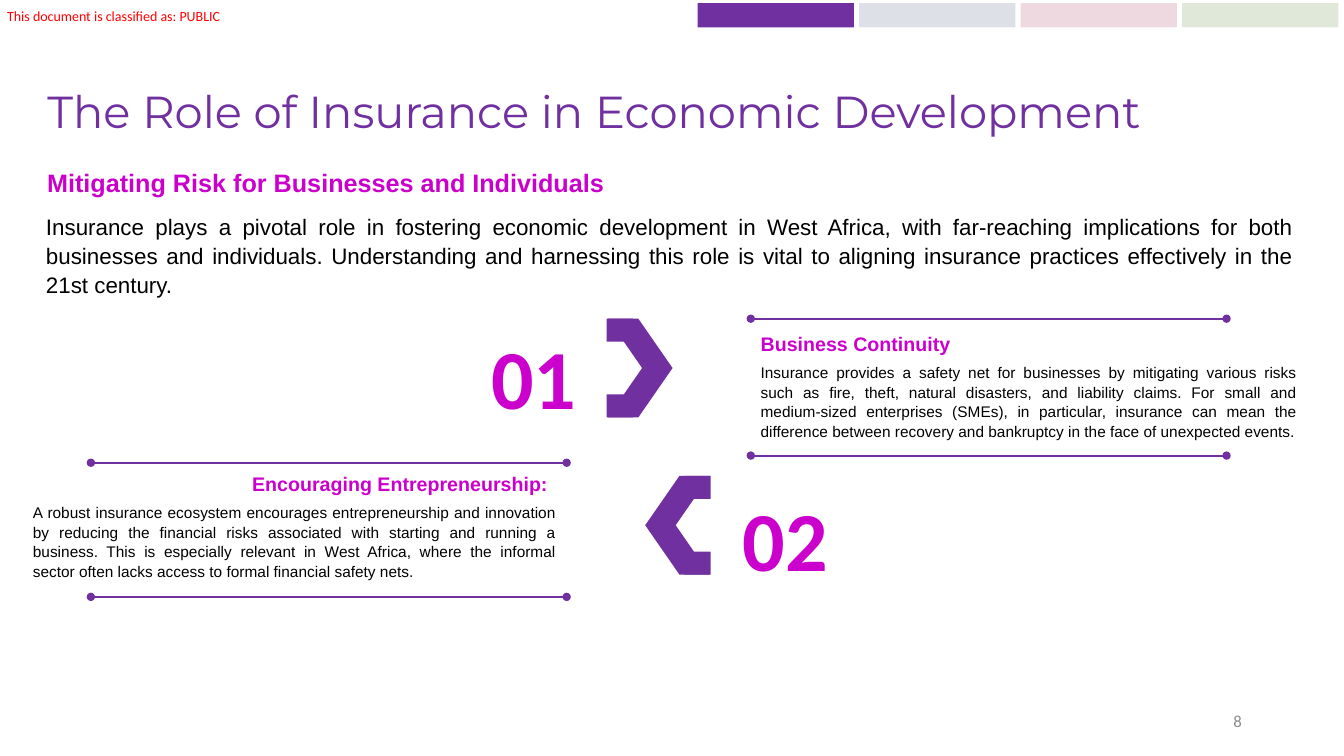
from lxml.etree import SubElement
from pptx import Presentation
from pptx.dml.color import RGBColor
from pptx.enum.shapes import MSO_CONNECTOR, MSO_SHAPE
from pptx.enum.text import MSO_ANCHOR, PP_ALIGN as Align
from pptx.oxml.ns import qn
from pptx.util import Cm, Pt

COLORS = {
    "purple": "7030A0", "magenta": "CC00CC", "black": "000000", "red": "FF0000",
    "gray": "8C8C8C", "navy": "203864", "crimson": "990033", "green": "336600",
}

TITLE = "The Role of Insurance in Economic Development"
SUBTITLE = "Mitigating Risk for Businesses and Individuals"
INTRO = (
    "Insurance plays a pivotal role in fostering economic development in West Africa, "
    "with far-reaching implications for both businesses and individuals. Understanding "
    "and harnessing this role is vital to aligning insurance practices effectively in "
    "the 21st century."
)
CLASSIFICATION = "This document is classified as: PUBLIC"
PAGE_NUMBER = "8"

# Boxes are left, top, width, height in centimetres.
POINTS = [
    {
        "number": "01", "number_at": (12.01, 8.08),
        "arrow_at": (15.32, 8.03), "bars_left": 15.29, "rotation": 0,
        "heading": "Business Continuity", "heading_align": Align.LEFT,
        "heading_box": (18.92, 8.23, 13.92, 0.86),
        "body": "Insurance provides a safety net for businesses by mitigating various "
                "risks such as fire, theft, natural disasters, and liability claims. For "
                "small and medium-sized enterprises (SMEs), in particular, insurance can "
                "mean the difference between recovery and bankruptcy in the face of "
                "unexpected events.",
        "body_box": (18.92, 8.99, 14.02, 2.74),
        "rules_left": 18.92, "rule_tops": (8.03, 11.48),
    },
    {
        "number": "02", "number_at": (18.34, 12.17),
        "arrow_at": (16.26, 11.99), "bars_left": 17.25, "rotation": 180,
        "heading": "Encouraging Entrepreneurship: ", "heading_align": Align.RIGHT,
        "heading_box": (2.67, 11.76, 11.53, 0.86),
        "body": "A robust insurance ecosystem encourages entrepreneurship and innovation "
                "by reducing the financial risks associated with starting and running a "
                "business. This is especially relevant in West Africa, where the informal "
                "sector often lacks access to formal financial safety nets.",
        "body_box": (0.58, 12.52, 13.69, 2.24),
        "rules_left": 2.29, "rule_tops": (11.66, 15.04),
    },
]
TABS = [("purple", None), ("navy", 15), ("crimson", 15), ("green", 15)]

TAB_LEFT, TAB_TOP, TAB_WIDTH, TAB_HEIGHT, TAB_STEP = 17.58, 0.08, 3.94, 0.61, 4.07
ARROW_WIDTH, ARROW_HEIGHT = 1.63, 2.49
BAR_WIDTH, BAR_HEIGHT = 0.66, 0.58
NUMBER_SIZE = (2.9, 2.82)
RULE_LENGTH = 11.99


def color(name):
    return RGBColor.from_string(COLORS[name])


def write(frame, text, size, color_name, font="Arial", bold=False, align=Align.LEFT,
          line_spacing=None, space_after=None):
    paragraph = frame.paragraphs[0]
    paragraph.alignment = align
    paragraph.line_spacing = line_spacing
    if space_after is not None:
        paragraph.space_after = Pt(space_after)
    run = paragraph.add_run()
    run.text = text
    run.font.size = Pt(size)
    run.font.name = font
    run.font.bold = bold
    run.font.color.rgb = color(color_name)


def add_text(slide, box, *content, **style):
    frame = slide.shapes.add_textbox(*map(Cm, box)).text_frame
    frame.word_wrap = True
    write(frame, *content, **style)
    return frame


def add_block(slide, kind, box, color_name, opacity=None):
    """Add a filled shape without outline; opacity is a percentage."""
    shape = slide.shapes.add_shape(kind, *map(Cm, box))
    shape.shadow.inherit = False
    shape.fill.solid()
    shape.fill.fore_color.rgb = color(color_name)
    shape.line.fill.background()
    if opacity is not None:
        fill_color = shape._element.spPr.find(qn("a:solidFill"))[0]
        SubElement(fill_color, qn("a:alpha")).set("val", str(opacity * 1000))
    return shape


def add_rule(slide, left, top):
    """Add a horizontal line with a dot at each end."""
    rule = slide.shapes.add_connector(
        MSO_CONNECTOR.STRAIGHT, Cm(left), Cm(top), Cm(left + RULE_LENGTH), Cm(top))
    rule.line.color.rgb = color("purple")
    rule.line.width = Pt(1.5)
    for end in ("a:headEnd", "a:tailEnd"):
        SubElement(rule.line._get_or_add_ln(), qn(end)).set("type", "oval")
    SubElement(rule._element.spPr, qn("a:effectLst"))


def add_point(slide, point):
    left, top = point["arrow_at"]
    arrow = add_block(slide, MSO_SHAPE.CHEVRON, (left, top, ARROW_WIDTH, ARROW_HEIGHT), "purple")
    arrow.adjustments[0] = 0.53
    arrow.rotation = point["rotation"]
    for bar_top in (top, top + ARROW_HEIGHT - BAR_HEIGHT):
        add_block(slide, MSO_SHAPE.RECTANGLE,
                  (point["bars_left"], bar_top, BAR_WIDTH, BAR_HEIGHT), "purple")
    add_text(slide, point["number_at"] + NUMBER_SIZE, point["number"], 60, "magenta",
             font="Calibri", bold=True, align=Align.CENTER)
    add_text(slide, point["body_box"], point["body"], 11, "black",
             align=Align.JUSTIFY, line_spacing=1.07, space_after=8)
    add_text(slide, point["heading_box"], point["heading"], 14, "magenta",
             bold=True, align=point["heading_align"])
    for rule_top in point["rule_tops"]:
        add_rule(slide, point["rules_left"], rule_top)


def main():
    presentation = Presentation()
    presentation.slide_width, presentation.slide_height = Cm(33.87), Cm(19.05)
    slide = presentation.slides.add_slide(presentation.slide_layouts[5])

    label = add_text(slide, (0.18, 0.18, 5.46, 0.43), CLASSIFICATION, 10, "red", font="Calibri")
    label.margin_left = label.margin_top = label.margin_right = label.margin_bottom = 0
    label.word_wrap = False

    title = slide.shapes.title
    title.left, title.top, title.width, title.height = map(Cm, (0.94, 1.02, 32, 3.68))
    title.text_frame.vertical_anchor = MSO_ANCHOR.MIDDLE
    write(title.text_frame, TITLE, 32, "purple", font="Montserrat", line_spacing=0.9)

    add_text(slide, (0.94, 4.04, 16.97, 1.02), SUBTITLE, 18, "magenta", bold=True,
             align=Align.JUSTIFY, line_spacing=1.07, space_after=8)
    add_text(slide, (0.91, 5.21, 31.93, 2.41), INTRO, 16, "black",
             align=Align.JUSTIFY, line_spacing=1.07, space_after=8)
    for point in POINTS:
        add_point(slide, point)

    page = add_text(slide, (23.93, 17.65, 7.62, 1.02), PAGE_NUMBER, 12, "gray",
                    font="Calibri", align=Align.RIGHT)
    page.vertical_anchor = MSO_ANCHOR.MIDDLE

    for index, (color_name, opacity) in enumerate(TABS):
        box = (TAB_LEFT + index * TAB_STEP, TAB_TOP, TAB_WIDTH, TAB_HEIGHT)
        add_block(slide, MSO_SHAPE.RECTANGLE, box, color_name, opacity)

    presentation.save("out.pptx")


if __name__ == "__main__":
    main()
